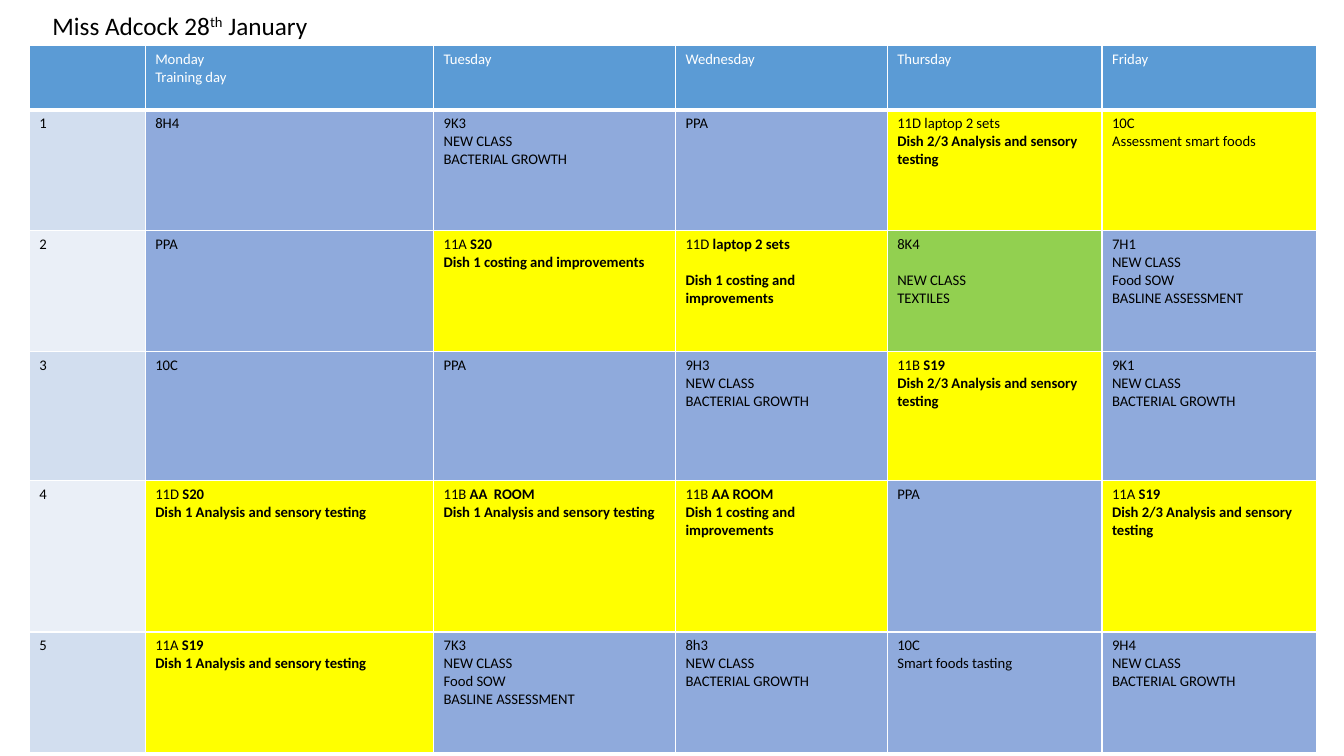
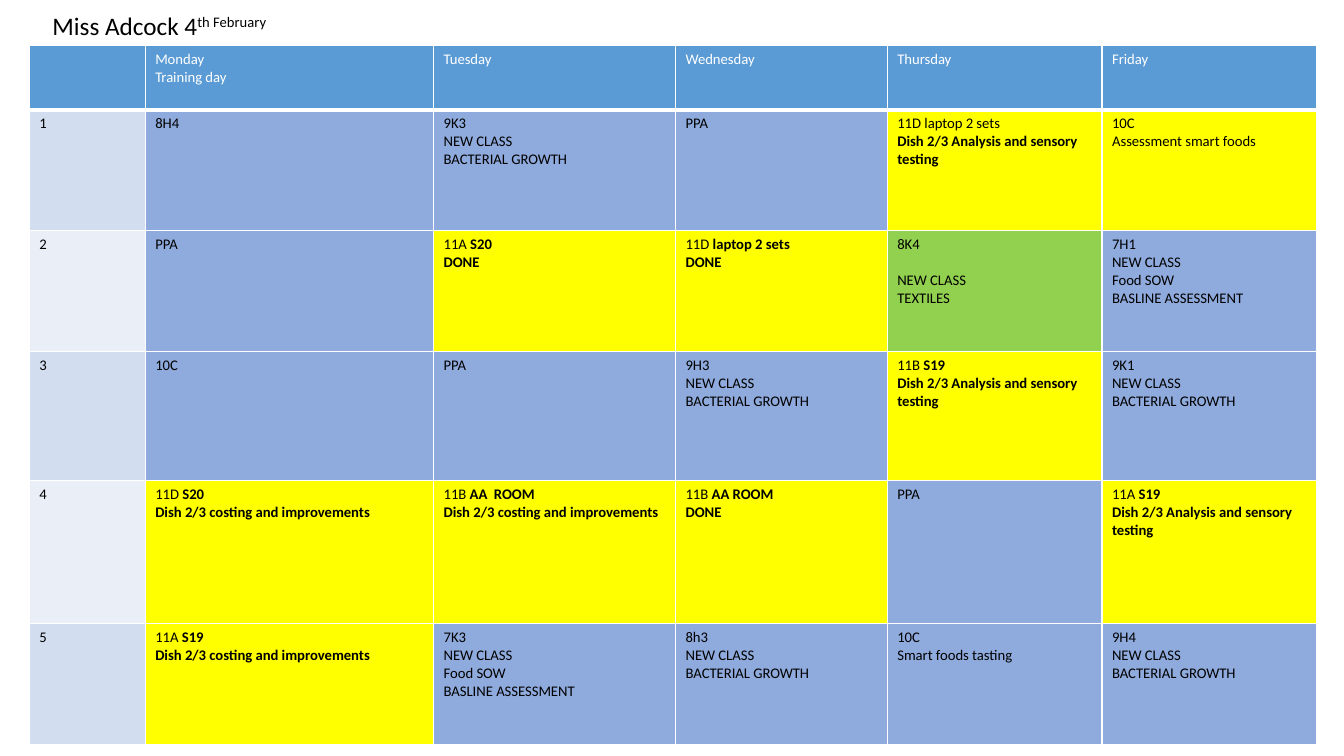
from lxml import etree
from pptx import Presentation
from pptx.dml.color import RGBColor
from pptx.enum.text import MSO_ANCHOR, MSO_AUTO_SIZE, PP_ALIGN
from pptx.oxml.ns import qn
from pptx.util import Inches, Pt

FONT = "Calibri"
COLORS = {
    "header": "5B9BD5",
    "odd": "D2DEEF",
    "even": "EAEFF7",
    "lesson": "8FAADC",
    "exam": "FFFF00",
    "textiles": "92D050",
    "white": "FFFFFF",
    "black": "000000",
}
COL_WIDTHS = [1.15, 2.86, 2.4, 2.1, 2.13, 2.13]
LINE_HEIGHT = 12.8

BACTERIA = "NEW CLASS\nBACTERIAL GROWTH"
BASELINE = "NEW CLASS\nFood SOW\nBASLINE ASSESSMENT"
ANALYSIS_1 = "*Dish 1 Analysis and sensory testing*"
ANALYSIS_23 = "*Dish 2/3 Analysis and sensory testing*"
COSTING_1 = "*Dish 1 costing and improvements*"
COSTING_23 = "*Dish 2/3 costing and improvements*"
DONE = "*DONE*"

# Asterisks enclose bold text; an empty line becomes space before the next one.
TIMETABLE = [
    ["", "Monday\nTraining day", "Tuesday", "Wednesday", "Thursday", "Friday"],
    ["1", "8H4", f"9K3\n{BACTERIA}", "PPA",
     f"11D laptop 2 sets\n{ANALYSIS_23}", "10C\nAssessment smart foods"],
    ["2", "PPA", "11A *S20*", "11D *laptop 2 sets*",
     "8K4\n\nNEW CLASS\nTEXTILES", f"7H1\n{BASELINE}"],
    ["3", "10C", "PPA", f"9H3\n{BACTERIA}",
     f"11B *S19*\n{ANALYSIS_23}", f"9K1\n{BACTERIA}"],
    ["4", "11D *S20*", "11B *AA  ROOM*", "11B *AA ROOM*",
     "PPA", f"11A *S19*\n{ANALYSIS_23}"],
    ["5", "11A *S19*", f"7K3\n{BASELINE}", f"8h3\n{BACTERIA}",
     "10C\nSmart foods tasting", f"9H4\n{BACTERIA}"],
]

# Title runs with superscript flags, height of row 4, topics by (period, day).
WEEKS = [
    ([("Miss Adcock 28", False), ("th", True), (" January", False)], 1.5,
     {(2, 2): COSTING_1, (2, 3): "\n" + COSTING_1,
      (4, 1): ANALYSIS_1, (4, 2): ANALYSIS_1, (4, 3): COSTING_1,
      (5, 1): ANALYSIS_1}),
    ([("Miss Adcock 4", False), ("th February", True)], 1.42,
     {(2, 2): DONE, (2, 3): DONE,
      (4, 1): COSTING_23, (4, 2): COSTING_23, (4, 3): DONE,
      (5, 1): COSTING_23}),
]


def write_cell(cell, text, color):
    tf = cell.text_frame
    p, gap = tf.paragraphs[0], 0
    bold = False
    for i, line in enumerate(text.split("\n")):
        if not line:
            gap = LINE_HEIGHT
            continue
        if i:
            p = tf.add_paragraph()
        p.space_before = Pt(gap)
        gap = 0
        for j, part in enumerate(line.split("*")):
            bold = j % 2 == 1
            if part:
                r = p.add_run()
                r.text = part
                r.font.name = FONT
                r.font.size = Pt(10.5)
                r.font.bold = bold
                r.font.color.rgb = RGBColor.from_string(COLORS[color])


def style_cell(cell, fill, bottom):
    """Fill the cell and draw white borders, the bottom one in the given points."""
    tc_pr = cell._tc.get_or_add_tcPr()
    for i, (side, width) in enumerate(zip("LRTB", (1, 1, 1, bottom))):
        ln = etree.Element(qn(f"a:ln{side}"), w=str(Pt(width)))
        solid = etree.SubElement(ln, qn("a:solidFill"))
        etree.SubElement(solid, qn("a:srgbClr"), val=COLORS["white"])
        tc_pr.insert(i, ln)
    cell.fill.solid()
    cell.fill.fore_color.rgb = RGBColor.from_string(COLORS[fill])


prs = Presentation()
prs.slide_width, prs.slide_height = Inches(13.33), Inches(7.5)

for title_runs, row_4_height, topics in WEEKS:
    s = prs.slides.add_slide(prs.slide_layouts[5])

    title = s.shapes.title
    title.left, title.top = Inches(0.42), Inches(0.05)
    title.width, title.height = Inches(3.62), Inches(0.4)
    tf = title.text_frame
    tf.word_wrap = True
    tf.auto_size = MSO_AUTO_SIZE.SHAPE_TO_FIT_TEXT
    tf.vertical_anchor = MSO_ANCHOR.TOP
    p = tf.paragraphs[0]
    p.alignment = PP_ALIGN.LEFT
    for text, superscript in title_runs:
        r = p.add_run()
        r.text = text
        r.font.name = FONT
        r.font.size = Pt(18)
        r.font.color.rgb = RGBColor.from_string(COLORS["black"])
        if superscript:
            r._r.get_or_add_rPr().set("baseline", "30000")

    row_heights = [0.64, 1.2, 1.2, 1.28, row_4_height, 1.2]
    table = s.shapes.add_table(
        len(row_heights), len(COL_WIDTHS), Inches(0.29), Inches(0.45),
        Inches(sum(COL_WIDTHS)), Inches(sum(row_heights))).table
    for column, width in zip(table.columns, COL_WIDTHS):
        column.width = Inches(width)
    for row, height in zip(table.rows, row_heights):
        row.height = Inches(height)

    for period, texts in enumerate(TIMETABLE):
        for day, text in enumerate(texts):
            if (period, day) in topics:
                text += "\n" + topics[period, day]
            if period == 0:
                fill = "header"
            elif day == 0:
                fill = "odd" if period % 2 else "even"
            elif text.startswith("11") or "Assessment" in text:
                fill = "exam"
            elif "TEXTILES" in text:
                fill = "textiles"
            else:
                fill = "lesson"
            cell = table.cell(period, day)
            style_cell(cell, fill, bottom=1 if period else 3)
            write_cell(cell, text, "black" if period else "white")

prs.save("out.pptx")
